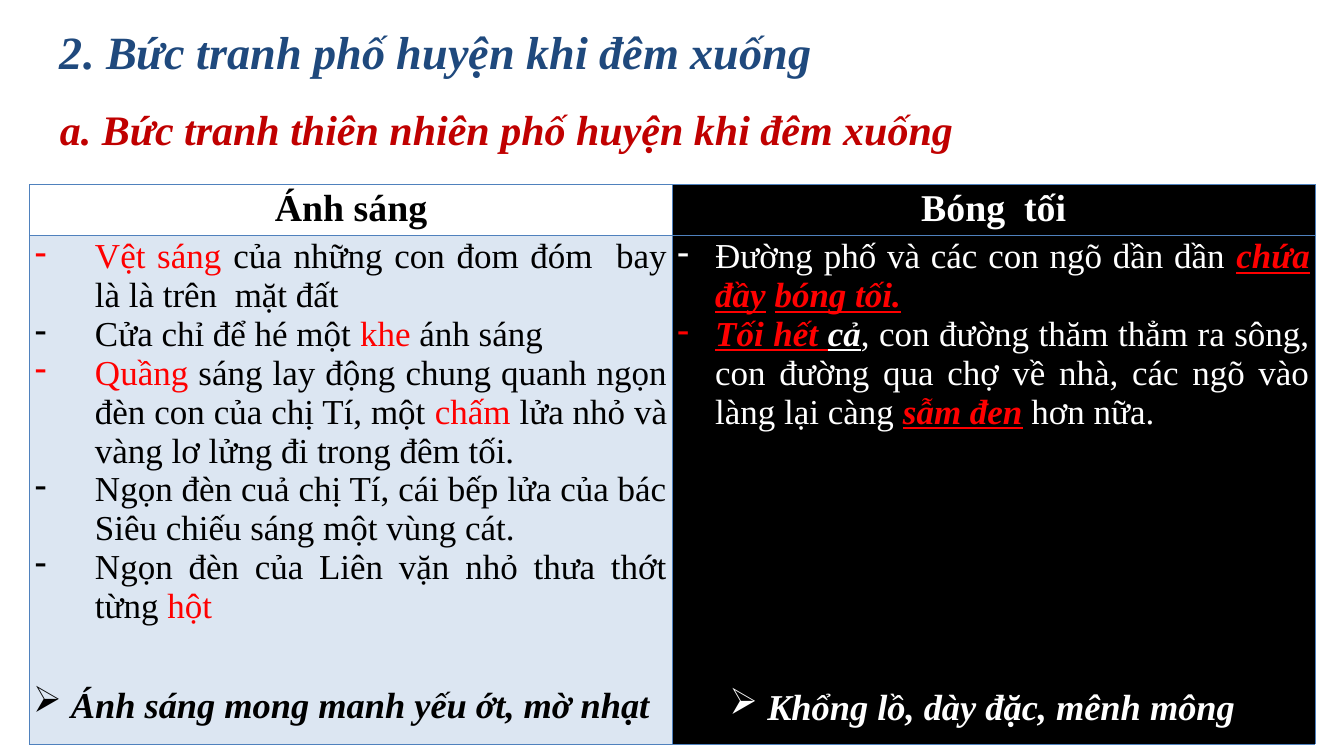
from lxml import etree
from pptx import Presentation
from pptx import util as u
from pptx.dml import color
from pptx.enum import text
from pptx.oxml import ns

FONT = "Times New Roman"
BLACK, WHITE, RED, BLUE = "000000", "FFFFFF", "FF0000", "4F81BD"
PLAIN, BOLD, STRONG, MARKED = "", "b", "bi", "biu"

LIGHT = [
    [("Vệt sáng ", RED, PLAIN), ("của những con đom đóm  bay là là trên  mặt đất", BLACK, PLAIN)],
    [("Cửa chỉ để hé một ", BLACK, PLAIN), ("khe ", RED, PLAIN), ("ánh sáng", BLACK, PLAIN)],
    [("Quầng ", RED, PLAIN), ("sáng lay động chung quanh ngọn đèn con của chị Tí, một ", BLACK, PLAIN),
     ("chấm ", RED, PLAIN), ("lửa nhỏ và vàng lơ lửng đi trong đêm tối.", BLACK, PLAIN)],
    [("Ngọn đèn cuả chị Tí, cái bếp lửa của bác Siêu chiếu sáng một vùng cát.", BLACK, PLAIN)],
    [("Ngọn đèn của Liên vặn nhỏ thưa thớt từng ", BLACK, PLAIN), ("hột ", RED, PLAIN)],
]
DARK = [
    [("Đường phố và các con ngõ dần dần ", WHITE, PLAIN), ("chứa đầy", RED, MARKED),
     (" ", RED, STRONG), ("bóng tối.", RED, MARKED)],
    [("Tối hết ", RED, MARKED), ("cả", WHITE, MARKED),
     (", con đường thăm thẳm ra sông, con đường qua chợ về nhà, các ngõ vào làng lại càng ", WHITE, PLAIN),
     ("sẫm đen", RED, MARKED), (" ", RED, STRONG), ("hơn nữa.", WHITE, PLAIN)],
]


def rgb(value):
    """Turn a hex string into a colour."""
    return color.RGBColor.from_string(value)


def style(font, size, hex_color, marks):
    """Set the size, colour and emphasis of a font."""
    font.name, font.size = FONT, u.Pt(size)
    font.color.rgb = rgb(hex_color)
    font.bold, font.italic, font.underline = ("b" in marks, "i" in marks, "u" in marks)


def add_bullet(paragraph, character, indent):
    """Give a paragraph a bullet with a hanging indent."""
    properties = paragraph._p.get_or_add_pPr()
    properties.set("marL", str(u.Pt(indent)))
    properties.set("indent", str(-u.Pt(indent)))
    etree.SubElement(properties, ns.qn("a:buChar")).set("char", character)


def fill_list(frame, items, indent):
    """Write justified, dashed items made of coloured runs."""
    for index, item in enumerate(items):
        paragraph = frame.add_paragraph() if index else frame.paragraphs[0]
        paragraph.alignment = text.PP_ALIGN.JUSTIFY
        add_bullet(paragraph, "-", indent)
        for words, hex_color, marks in item:
            run = paragraph.add_run()
            run.text = words
            style(run.font, 50, hex_color, marks)


def paint_cell(cell, hex_color):
    """Fill a cell and outline its four sides."""
    cell.fill.solid()
    cell.fill.fore_color.rgb = rgb(hex_color)
    properties = cell._tc.get_or_add_tcPr()
    for index, side in enumerate("LRTB"):
        line = etree.Element(ns.qn(f"a:ln{side}"), w=str(u.Pt(1)))
        fill = etree.SubElement(line, ns.qn("a:solidFill"))
        etree.SubElement(fill, ns.qn("a:srgbClr")).set("val", BLUE)
        properties.insert(index, line)


def write_line(shape, words, size, hex_color, wrap=True, margins=(7.2, 3.6)):
    """Write one bold italic line into a shape."""
    frame = shape.text_frame
    frame.word_wrap = wrap
    frame.auto_size = text.MSO_AUTO_SIZE.NONE
    frame.vertical_anchor = text.MSO_ANCHOR.TOP
    frame.margin_left = frame.margin_right = u.Pt(margins[0])
    frame.margin_top = frame.margin_bottom = u.Pt(margins[1])
    paragraph = frame.paragraphs[0]
    paragraph.text = words
    paragraph.alignment = text.PP_ALIGN.LEFT
    style(paragraph.font, size, hex_color, STRONG)
    return paragraph


def add_headings(slide, left, top, width):
    """Place the title and the subheading below it."""
    title = slide.shapes.title
    title.left, title.top, title.width, title.height = map(u.Pt, (left, top, width, 87))
    write_line(title, "2. Bức tranh phố huyện khi đêm xuống", 66, "1F497D")
    subheading = slide.shapes.add_textbox(*map(u.Pt, (left, top + 114, width + 121, 80)))
    write_line(subheading, "a. Bức tranh thiên nhiên phố huyện khi đêm xuống", 60, "C00000", wrap=False)


def add_comparison(slide, left, top, width, height):
    """Place the table that sets light against darkness."""
    table = slide.shapes.add_table(2, 2, *map(u.Pt, (left, top, width, height))).table
    table.first_row = table.horz_banding = False
    table.rows[0].height, table.rows[1].height = u.Pt(72), u.Pt(height - 72)
    columns = [
        ("Ánh sáng", BLACK, WHITE, "DCE6F2", LIGHT, 86),
        ("Bóng  tối", WHITE, BLACK, BLACK, DARK, 54),
    ]
    for index, (heading, ink, header_fill, body_fill, items, indent) in enumerate(columns):
        header, body = table.cell(0, index), table.cell(1, index)
        paint_cell(header, header_fill)
        paint_cell(body, body_fill)
        paragraph = header.text_frame.paragraphs[0]
        paragraph.text = heading
        paragraph.alignment = text.PP_ALIGN.CENTER
        style(paragraph.font, 54, ink, BOLD)
        fill_list(body.text_frame, items, indent)


def add_conclusion(slide, box, words, hex_color, margins):
    """Place an arrow-bulleted conclusion over a table column."""
    shape = slide.shapes.add_textbox(*map(u.Pt, box))
    add_bullet(write_line(shape, words, 52, hex_color, margins=margins), "➢", 54)


def main():
    """Build and save the slide."""
    presentation = Presentation()
    presentation.slide_width, presentation.slide_height = u.Pt(1920), u.Pt(1080)
    slide = presentation.slides.add_slide(presentation.slide_layouts[5])
    add_headings(slide, 78.5, 30, 1182)
    add_comparison(slide, 42.5, 264, 1836, 799)
    add_conclusion(slide, (30, 966, 993, 81), "Ánh sáng mong manh yếu ớt, mờ nhạt", BLACK, (17.3, 8.6))
    add_conclusion(slide, (1035, 973.5, 903, 70.5), "Khổng lồ, dày đặc, mênh mông", WHITE, (7.2, 3.6))
    presentation.save("out.pptx")


if __name__ == "__main__":
    main()
